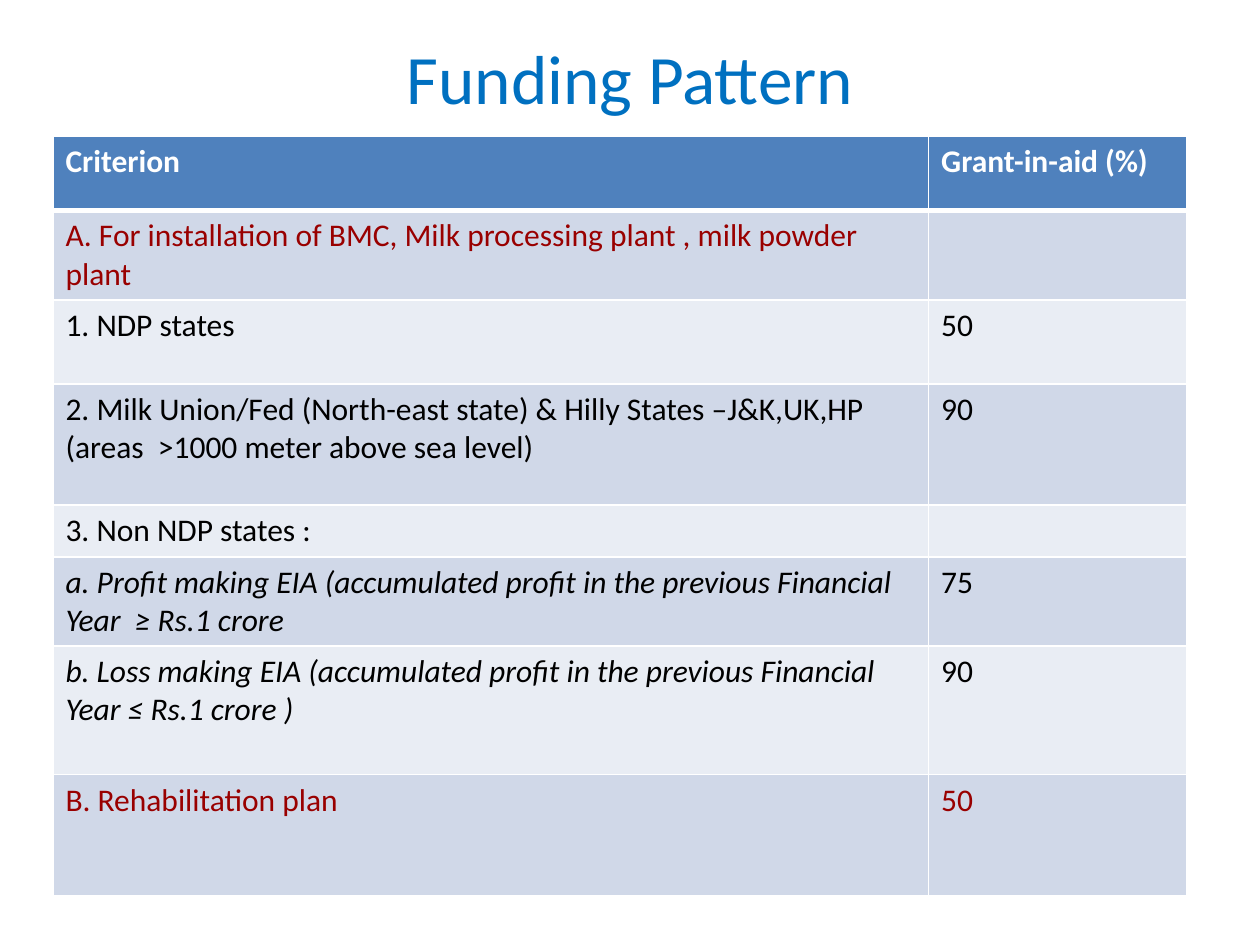
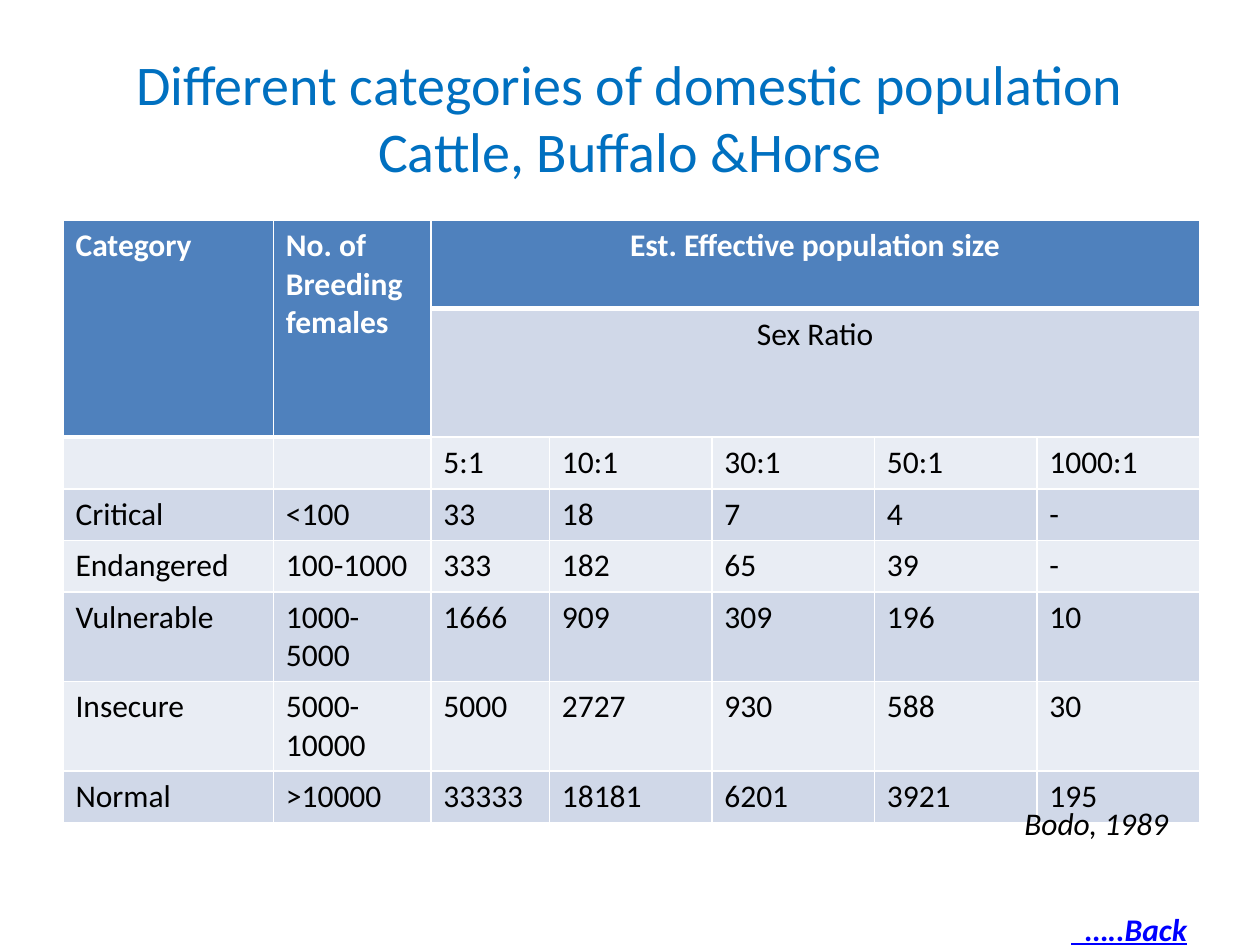
"""Builds two slides on dairy grants and livestock population categories."""
from lxml import etree
from pptx import Presentation
from pptx import util as u
from pptx.dml.color import RGBColor
from pptx.enum import text
from pptx.oxml.ns import qn

COLORS = {"title": "0070C0", "header": "4F81BD", "odd": "D0D8E8", "even": "E9EDF4",
          "white": "FFFFFF", "black": "000000", "section": "990000", "link": "0000FF"}
FONT, BODY = "Calibri", 18
WIDTH, HEIGHT = 10, 7.5
LEFT, CENTER, RIGHT = text.PP_ALIGN.LEFT, text.PP_ALIGN.CENTER, text.PP_ALIGN.RIGHT

FUNDING = {
    "at": (0.42, 1.08),
    "cols": [6.95, 2.05],
    "heights": [0.59, 0.71, 0.67, 0.96, 0.41, 0.71, 1.02, 0.96],
    "rows": [
        ("Criterion", "Grant-in-aid (%)"),
        ("A. For installation of BMC, Milk processing plant , milk powder plant", ""),
        ("1. NDP states", "50"),
        ("2. Milk Union/Fed (North-east state) & Hilly States –J&K,UK,HP "
         "(areas  >1000 meter above sea level)", "90"),
        ("3. Non NDP states :", ""),
        ("a. Profit making EIA (accumulated profit in the previous Financial "
         "Year  ≥ Rs.1 crore", "75"),
        ("b. Loss making EIA (accumulated profit in the previous Financial "
         "Year ≤ Rs.1 crore )", "90"),
        ("B. Rehabilitation plan", "50"),
    ],
    "section_rows": {1, 7},
    "italic": {(5, 0), (6, 0)},
}
POPULATION = {
    "at": (0.5, 1.75),
    "cols": [1.67, 1.25, 0.94] + [1.29] * 4,
    "heights": [0.7, 1.02, 0.41, 0.41, 0.41, 0.71, 0.71, 0.41],
    "rows": [
        ("Category", "No. of\nBreeding females", "Est. Effective population size"),
        ("", "", "Sex Ratio"),
        ("", "", "5:1", "10:1", "30:1", "50:1", "1000:1"),
        ("Critical", "<100", "33", "18", "7", "4", "-"),
        ("Endangered", "100-1000", "333", "182", "65", "39", "-"),
        ("Vulnerable", "1000-5000", "1666", "909", "309", "196", "10"),
        ("Insecure", "5000-10000", "5000", "2727", "930", "588", "30"),
        ("Normal", ">10000", "33333", "18181", "6201", "3921", "195"),
    ],
    "merges": [((0, 0), (1, 0)), ((0, 1), (1, 1)), ((0, 2), (0, 6)), ((1, 2), (1, 6))],
    "tall_headers": {(1, 0), (1, 1)},
    "centered": {(0, 2), (1, 2)},
}
SLIDES = [
    {"title": "Funding Pattern", "size": 39.6, "title_height": 0.62, "table": FUNDING},
    {"title": "Different categories of domestic population\vCattle, Buffalo &Horse",
     "size": 32, "title_height": 1.25, "table": POPULATION,
     "notes": [("Bodo, 1989", (6.33, 6.33, 3.04, 0.4), {"italic": True}),
               ("  …..Back", (2.75, 7.17, 6.77, 0.4),
                {"color": "link", "bold": True, "italic": True, "underline": True})]},
]


def rgb(name):
    return RGBColor.from_string(COLORS[name])


def write(tf, words, size=BODY, color="black", align=LEFT, **style):
    tf.text = words
    for p in tf.paragraphs:
        p.alignment = align
        for r in p.runs:
            r.font.name, r.font.size = FONT, u.Pt(size)
            r.font.color.rgb = rgb(color)
            for key, value in style.items():
                setattr(r.font, key, value)


def add_text(slide, words, box, anchor=text.MSO_ANCHOR.TOP, **style):
    tf = slide.shapes.add_textbox(*map(u.Inches, box)).text_frame
    tf.word_wrap, tf.vertical_anchor = True, anchor
    write(tf, words, **style)


def add_borders(cell, top, bottom):
    tc_pr = cell._tc.get_or_add_tcPr()
    for side, points in (("L", 1), ("R", 1), ("T", top), ("B", bottom)):
        ln = etree.SubElement(tc_pr, qn(f"a:ln{side}"), w=str(u.Pt(points)))
        fill = etree.SubElement(ln, qn("a:solidFill"))
        etree.SubElement(fill, qn("a:srgbClr"), val=COLORS["white"])


def add_table(slide, spec_data):
    cols, heights, rows = (spec_data[key] for key in ("cols", "heights", "rows"))
    box = (*spec_data["at"], sum(cols), sum(heights))
    table = slide.shapes.add_table(len(rows), len(cols), *map(u.Inches, box)).table
    table.first_row = table.horz_banding = False
    for col, width in zip(table.columns, cols):
        col.width = u.Inches(width)
    for row, height in zip(table.rows, heights):
        row.height = u.Inches(height)
    for first, last in spec_data.get("merges", []):
        table.cell(*first).merge(table.cell(*last))

    def is_header(i, j):
        return i == 0 or (i, j) in spec_data.get("tall_headers", ())

    for i, words in enumerate(rows):
        for j in range(len(cols)):
            cell, header = table.cell(i, j), is_header(i, j)
            ends = header and not is_header(i + 1, j)
            starts = i > 0 and not header and is_header(i - 1, j)
            add_borders(cell, 3 if starts else 1, 3 if ends else 1)
            cell.fill.solid()
            cell.fill.fore_color.rgb = rgb("header" if header else "odd" if i % 2 else "even")
            if j < len(words) and words[j]:
                section = i in spec_data.get("section_rows", ())
                write(cell.text_frame, words[j], bold=header,
                      color="white" if header else "section" if section else "black",
                      align=CENTER if (i, j) in spec_data.get("centered", ()) else LEFT,
                      italic=(i, j) in spec_data.get("italic", ()))


def main():
    prs = Presentation()
    prs.slide_width, prs.slide_height = u.Inches(WIDTH), u.Inches(HEIGHT)
    for page in SLIDES:
        slide = prs.slides.add_slide(prs.slide_layouts[6])
        add_text(slide, page["title"], (0.5, 0.3, 9, page["title_height"]),
                 anchor=text.MSO_ANCHOR.MIDDLE, size=page["size"], color="title", align=CENTER)
        add_table(slide, page["table"])
        for words, box, style in page.get("notes", []):
            add_text(slide, words, box, align=RIGHT, **style)
    prs.save("out.pptx")


if __name__ == "__main__":
    main()
